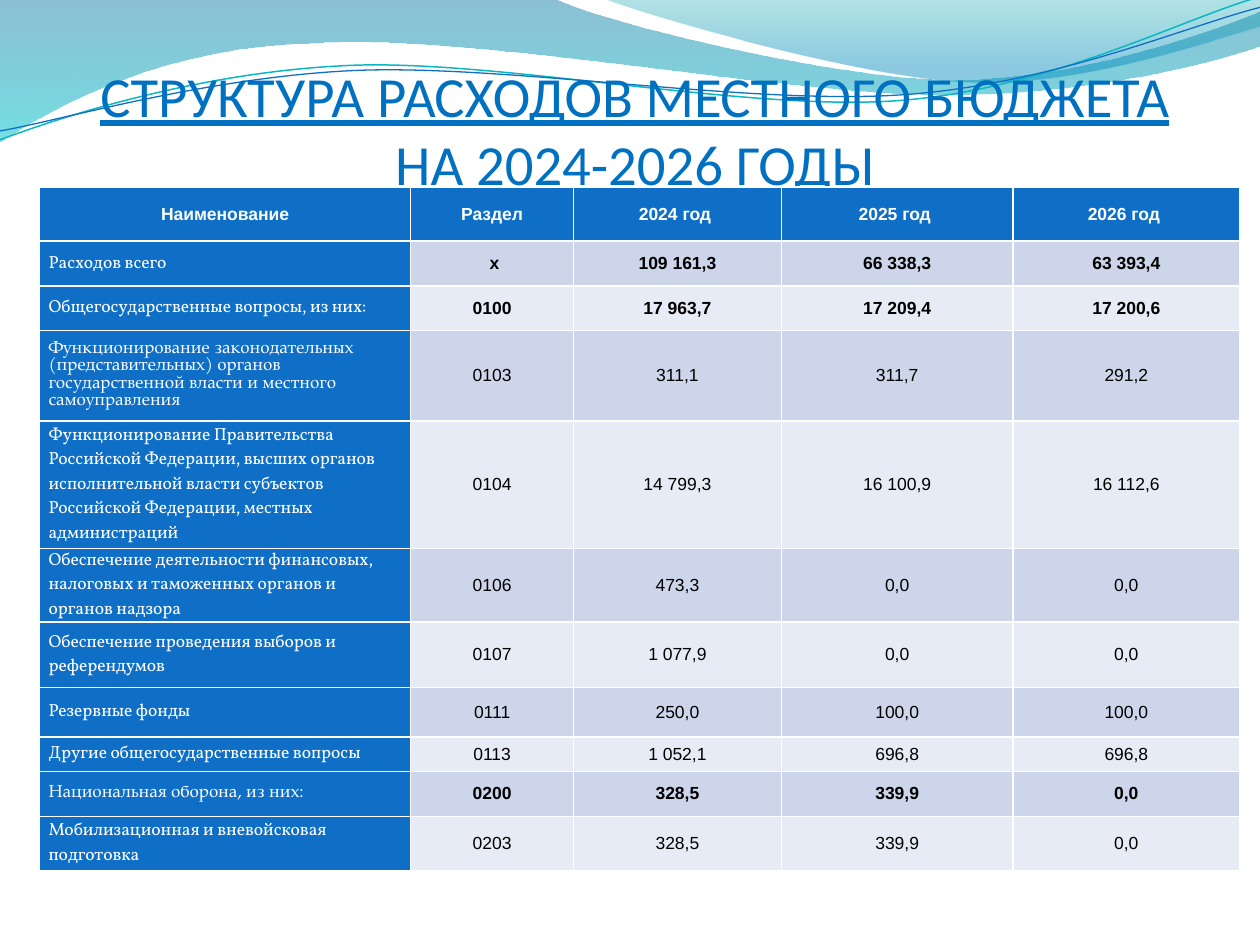
from lxml.etree import SubElement
from pptx import Presentation
from pptx.dml.color import RGBColor
from pptx.enum.text import MSO_VERTICAL_ANCHOR as Anchor, PP_PARAGRAPH_ALIGNMENT as Align
from pptx.oxml.ns import qn
from pptx.util import Cm, Pt

BLUE, WHITE, BLACK = "0F6FC6", "FFFFFF", "000000"
BANDS = ("CCD5EA", "E7EBF5")
SERIF, OLD_STYLE = "Vollkorn", "TeX Gyre Pagella"

COLUMN_WIDTHS = (7.49, 3.28, 4.19, 4.67, 4.57)
HEADER_HEIGHT = 1.09
HEADINGS = ("Наименование", "Раздел", "2024 год ", "2025 год ", "2026 год ")
EXPENSES = [
    (0.91, SERIF, True, "Расходов всего", " х", "109 161,3", "66 338,3", "63 393,4"),
    (0.89, SERIF, True, "Общегосударственные вопросы, из них:",
     "0100", "17 963,7", "17 209,4", "17 200,6"),
    (1.83, OLD_STYLE, False, "Функционирование законодательных (представительных) органов "
     "государственной власти и местного самоуправления", "0103", "311,1", "311,7", "291,2"),
    (2.57, SERIF, False, "Функционирование Правительства Российской Федерации, высших органов "
     "исполнительной власти субъектов Российской Федерации, местных администраций",
     "0104", "14 799,3", "16 100,9", "16 112,6"),
    (1.48, SERIF, False, "Обеспечение деятельности финансовых, налоговых и таможенных органов "
     "и органов надзора", "0106", "473,3", "0,0", "0,0"),
    (1.32, SERIF, False, "Обеспечение проведения выборов и референдумов",
     "0107", "1 077,9", "0,0", "0,0"),
    (1, SERIF, False, "Резервные фонды", "0111", "250,0", "100,0", "100,0"),
    (0.69, SERIF, False, "Другие общегосударственные вопросы",
     "0113", "1 052,1", "696,8", "696,8"),
    (0.91, OLD_STYLE, True, "Национальная оборона, из них:",
     "0200", "328,5", "339,9", "0,0"),
    (1.09, SERIF, False, "Мобилизационная и вневойсковая подготовка",
     "0203", "328,5", "339,9", "0,0"),
]

WIDE_WAVE = [
    [(0, 0)], [(11.18, -0.03)],
    [(12.09, 0.43), (16.87, 1.6), (19.25, 1.6)],
    [(21.67, 1.6), (24.33, 0.66), (25.4, 0.23)],
    [(25.43, 0.91)],
    [(24.97, 1.12), (22.1, 1.93), (18.95, 1.91)],
    [(15.8, 1.91), (9.7, 0.71), (6.53, 0.86)],
    [(3.28, 0.91), (1.17, 2.11), (-0.03, 2.87)],
]
RIGHT_WAVE = [
    [(12.17, -0.03)],
    [(12.93, 0.28), (17.32, 1.57), (19.53, 1.65)],
    [(21.74, 1.75), (24.41, 0.81), (25.4, 0.53)],
    [(25.4, 0)],
]
TEAL_STRAND = [
    [(0, 2.82)],
    [(1.22, 2.36), (4.01, 1.45), (7.04, 1.32)],
    [(10.03, 1.19), (15.06, 2.26), (18.11, 2.03)],
    [(21.16, 1.8), (23.83, 0.38), (25.35, -0.05)],
]
BLUE_STRAND = [
    [(0, 2.64)],
    [(1.19, 2.44), (4.17, 1.55), (7.19, 1.42)],
    [(10.24, 1.3), (15.16, 2.13), (18.21, 1.91)],
    [(21.23, 1.7), (23.9, 0.53), (25.4, 0.15)],
]


def color(value):
    return RGBColor.from_string(value)


def apply(target, values):
    for name, value in values.items():
        setattr(target, name, value)


def bend(figure, segments):
    straight = list(figure.element.spPr.iter(qn("a:lnTo")))
    for line, segment in zip(straight, segments):
        if len(segment) == 3:
            curve = line.makeelement(qn("a:cubicBezTo"))
            for x, y in segment:
                SubElement(curve, qn("a:pt"),
                           x=str(Cm(x) - figure.left), y=str(Cm(y) - figure.top))
            line.getparent().replace(line, curve)


def add_outline(slide, outline, closed):
    start, *ends = [(Cm(x), Cm(y)) for x, y in (segment[-1] for segment in outline)]
    builder = slide.shapes.build_freeform(*start)
    builder.add_line_segments(ends, close=closed)
    figure = builder.convert_to_shape()
    figure.shadow.inherit = False
    bend(figure, outline[1:])
    return figure


def add_wave(slide, outline, stops):
    wave = add_outline(slide, outline, True)
    wave.line.fill.background()
    wave.fill.gradient()
    wave.fill.gradient_angle = 270
    for stop, (position, tint, _) in zip(wave.fill.gradient_stops, stops):
        stop.position = position
        stop.color.rgb = color(tint)
    for tint_xml, (_, _, opacity) in zip(wave.element.spPr.iter(qn("a:srgbClr")), stops):
        SubElement(tint_xml, qn("a:alpha"), val=str(opacity * 1000))


def add_strand(slide, outline, tint, width):
    strand = add_outline(slide, outline, False)
    strand.fill.background()
    strand.line.color.rgb = color(tint)
    strand.line.width = Pt(width)


def write(frame, text, tint, align, font_values):
    paragraph = frame.paragraphs[0]
    paragraph.alignment = align
    run = paragraph.add_run()
    run.text = text
    apply(run.font, font_values)
    run.font.color.rgb = color(tint)


def add_title(slide, text):
    frame = slide.shapes.add_textbox(Cm(1.27), Cm(1.96), Cm(23.06), Cm(2.01)).text_frame
    apply(frame, {"word_wrap": True, "vertical_anchor": Anchor.BOTTOM, "margin_left": 0,
                  "margin_top": Cm(0.13), "margin_right": 0, "margin_bottom": 0})
    write(frame, text, "0070C0", Align.CENTER,
          {"name": "Calibri", "size": Pt(32.4), "underline": True})


def set_borders(cell):
    properties = cell._tc.get_or_add_tcPr()
    for position, side in enumerate(("lnL", "lnR", "lnT", "lnB")):
        border = properties.makeelement(qn(f"a:{side}"), {"w": str(Pt(1))})
        properties.insert(position, border)
        SubElement(SubElement(border, qn("a:solidFill")), qn("a:srgbClr"), val=WHITE)


def fill_cell(cell, text, background, tint, align, font_name, bold):
    apply(cell, {"vertical_anchor": Anchor.MIDDLE, "margin_left": Cm(0.19),
                 "margin_right": Cm(0.19), "margin_top": 0, "margin_bottom": 0})
    cell.fill.solid()
    cell.fill.fore_color.rgb = color(background)
    set_borders(cell)
    write(cell.text_frame, text, tint, align,
          {"name": font_name, "size": Pt(10), "bold": bold})


def add_expenses(slide):
    heights = [HEADER_HEIGHT] + [expense[0] for expense in EXPENSES]
    table = slide.shapes.add_table(
        len(heights), len(COLUMN_WIDTHS), Cm(0.79), Cm(3.77),
        Cm(sum(COLUMN_WIDTHS)), Cm(sum(heights))).table
    for column, width in zip(table.columns, COLUMN_WIDTHS):
        column.width = Cm(width)
    for row, height in zip(table.rows, heights):
        row.height = Cm(height)
    for column, heading in enumerate(HEADINGS):
        fill_cell(table.cell(0, column), heading, BLUE, WHITE, Align.CENTER, "Arial", True)
    for row, (_, label_font, bold, label, *figures) in enumerate(EXPENSES, 1):
        fill_cell(table.cell(row, 0), label, BLUE, WHITE, Align.LEFT, label_font, False)
        for column, figure in enumerate(figures, 1):
            fill_cell(table.cell(row, column), figure, BANDS[(row - 1) % 2], BLACK,
                      Align.CENTER, "Arial", bold)


def main():
    deck = Presentation()
    apply(deck, {"slide_width": Cm(25.4), "slide_height": Cm(19.05)})
    slide = deck.slides.add_slide(deck.slide_layouts[6])
    add_wave(slide, WIDE_WAVE, [(0, "0074A1", 45), (1, "00C6CF", 55)])
    add_wave(slide, RIGHT_WAVE, [(0, "00A1A9", 30), (0.8, "008BBF", 45)])
    add_strand(slide, TEAL_STRAND, "0AB8BF", 0.85)
    add_strand(slide, BLUE_STRAND, BLUE, 0.75)
    add_title(slide, "СТРУКТУРА РАСХОДОВ МЕСТНОГО БЮДЖЕТА НА 2024-2026 ГОДЫ")
    add_expenses(slide)
    deck.save("out.pptx")


if __name__ == "__main__":
    main()
